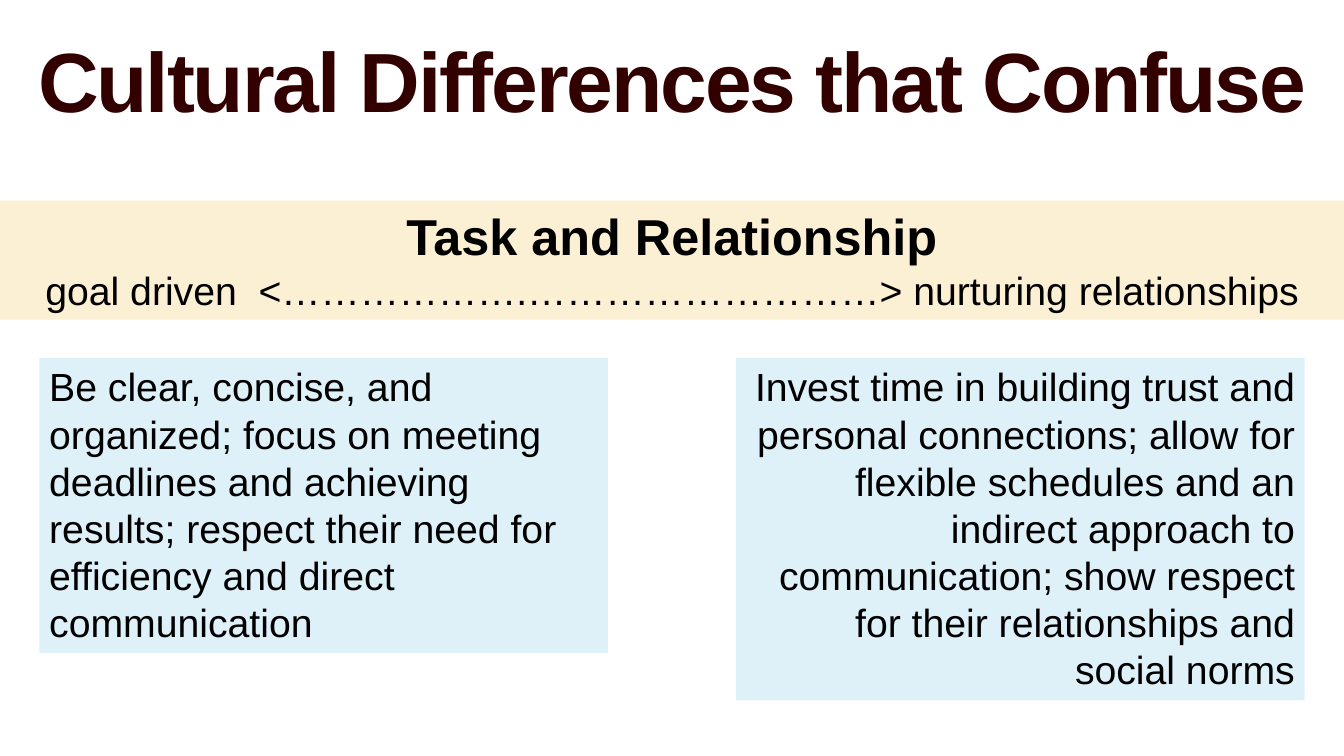
import pptx
import pptx.dml.color
import pptx.enum.shapes
import pptx.enum.text
import pptx.util

RGBColor = pptx.dml.color.RGBColor
ALIGN = pptx.enum.text.PP_ALIGN
Inches = pptx.util.Inches

MAROON = RGBColor(0x33, 0x00, 0x00)
BLACK = RGBColor(0x00, 0x00, 0x00)
CREAM = RGBColor(0xFC, 0xF0, 0xD4)
PALE_BLUE = RGBColor(0xDE, 0xF0, 0xF8)

# Slide and column measures, in inches
WIDTH, HEIGHT = 13.33, 7.5
MARGIN = 0.39
COLUMN_WIDTH = 5.64
COLUMN_TOP = 3.55
LEFT_COLUMN = MARGIN
RIGHT_COLUMN = WIDTH - MARGIN - COLUMN_WIDTH


def write_text(paragraph, text, size=28, bold=False, color=BLACK,
               align=ALIGN.LEFT, spacing=None):
    paragraph.alignment = align
    run = paragraph.add_run()
    run.text = text
    run.font.name = "Arial"
    run.font.size = pptx.util.Pt(size)
    run.font.bold = bold
    run.font.color.rgb = color
    if spacing is not None:
        run.font._element.set("spc", str(round(spacing * 100)))


def prepare_frame(shape):
    frame = shape.text_frame
    frame.word_wrap = True
    frame.auto_size = pptx.enum.text.MSO_AUTO_SIZE.SHAPE_TO_FIT_TEXT
    frame.vertical_anchor = pptx.enum.text.MSO_ANCHOR.TOP
    return frame


def add_title(slide, text):
    box = slide.shapes.add_textbox(0, Inches(0.23), Inches(WIDTH), Inches(1.11))
    write_text(prepare_frame(box).paragraphs[0], text, size=60, bold=True,
               color=MAROON, align=ALIGN.CENTER, spacing=-1.5)


def add_panel(slide, left, top, width, height, fill):
    panel = slide.shapes.add_shape(
        pptx.enum.shapes.MSO_SHAPE.RECTANGLE,
        Inches(left), Inches(top), Inches(width), Inches(height))
    panel.shadow.inherit = False
    panel.fill.solid()
    panel.fill.fore_color.rgb = fill
    panel.line.fill.background()
    return prepare_frame(panel)


def add_spectrum_band(slide, heading, spectrum):
    frame = add_panel(slide, 0, 1.99, WIDTH, 1.18, CREAM)
    write_text(frame.paragraphs[0], heading, size=36, bold=True, align=ALIGN.CENTER)
    write_text(frame.add_paragraph(), spectrum, align=ALIGN.CENTER)


def add_advice(slide, text, left, height, align):
    frame = add_panel(slide, left, COLUMN_TOP, COLUMN_WIDTH, height, PALE_BLUE)
    write_text(frame.paragraphs[0], text, align=align)


def main():
    presentation = pptx.Presentation()
    presentation.slide_width = Inches(WIDTH)
    presentation.slide_height = Inches(HEIGHT)
    slide = presentation.slides.add_slide(presentation.slide_layouts[6])

    # Heading and the spectrum between the two styles
    add_spectrum_band(
        slide, "Task and Relationship",
        "goal driven  <……………….………………………> nurturing relationships")
    add_title(slide, "Cultural Differences that Confuse")

    # Advice for each end of the spectrum
    add_advice(
        slide,
        "Invest time in building trust and personal connections; allow for "
        "flexible schedules and an indirect approach to communication; show "
        "respect for their relationships and social norms",
        RIGHT_COLUMN, 3.4, ALIGN.RIGHT)
    add_advice(
        slide,
        "Be clear, concise, and organized; focus on meeting deadlines and "
        "achieving results; respect their need for efficiency and direct "
        "communication",
        LEFT_COLUMN, 2.93, ALIGN.LEFT)

    presentation.save("out.pptx")


if __name__ == "__main__":
    main()
